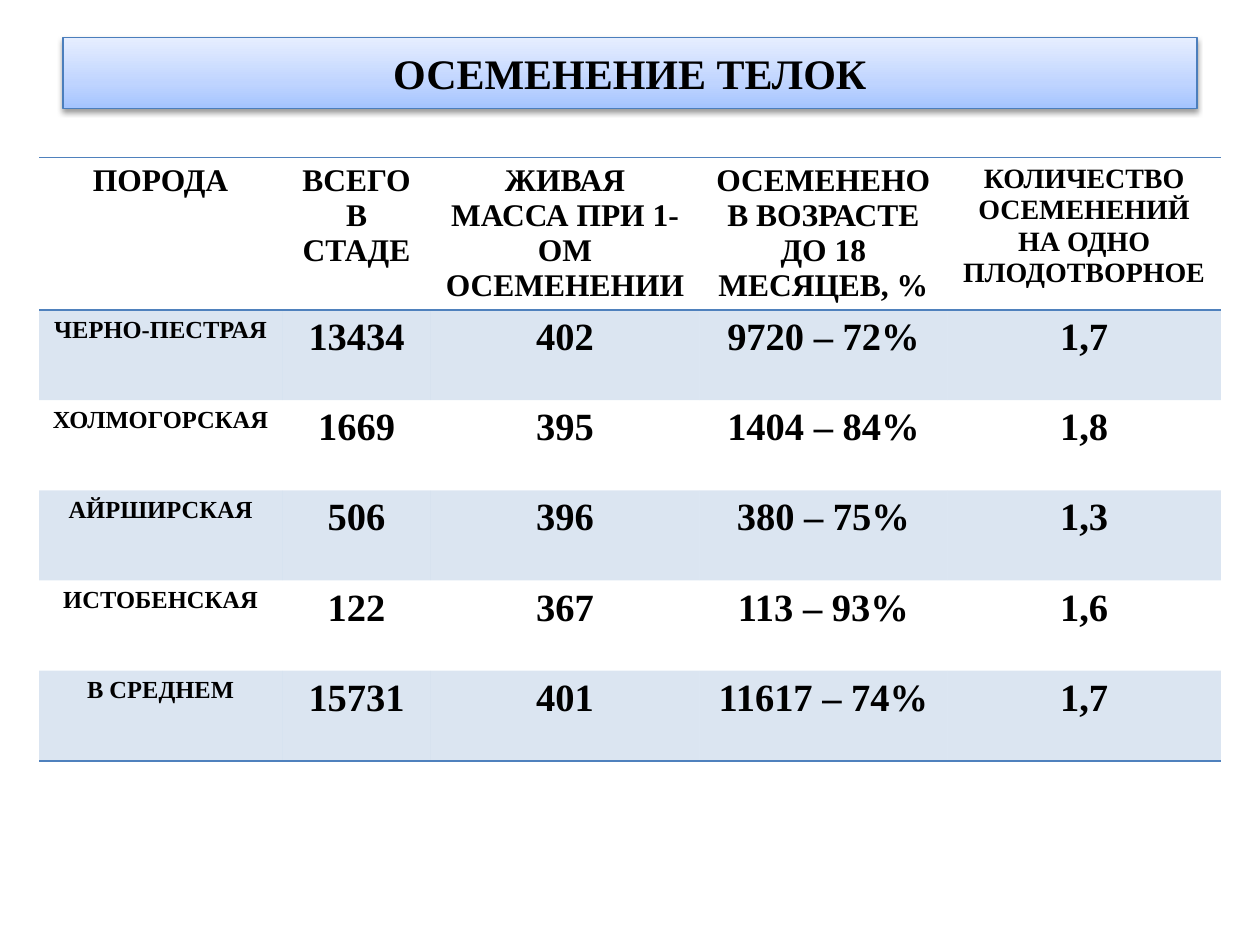
"""Build a slide with a title banner and a table of heifer insemination by breed."""
import pptx
import pptx.dml.color
import pptx.enum.shapes
import pptx.enum.text
import pptx.oxml
import pptx.oxml.ns
import pptx.util

Inches = pptx.util.Inches
Pt = pptx.util.Pt

COLORS = {
    "text": "000000",
    "accent": "4F81BD",
    "banner_line": "4B7EBC",
    "banner_bottom": "A4C4FF",
    "banner_middle": "BFD4FF",
    "banner_top": "E6EEFF",
    "shadow": "000000",
}
FONT = "Times New Roman"
PLAIN_TABLE_STYLE = "{2D5ABB26-0587-4C30-8999-92F81FD0307C}"
COLUMN_WIDTHS = [1.93, 1.18, 2.13, 1.97, 2.17]
HEADER_HEIGHT = 1.21
ROW_HEIGHT = 0.716
HEADER_SIZES = [18, 18, 18, 18, 16]
BODY_SIZES = [14, 22, 22, 22, 22]
ROWS = [
    ["ПОРОДА", "ВСЕГО В СТАДЕ", "ЖИВАЯ МАССА ПРИ 1-ОМ ОСЕМЕНЕНИИ",
     "ОСЕМЕНЕНО В ВОЗРАСТЕ ДО 18 МЕСЯЦЕВ, %",
     "КОЛИЧЕСТВО ОСЕМЕНЕНИЙ НА ОДНО ПЛОДОТВОРНОЕ"],
    ["ЧЕРНО-ПЕСТРАЯ", "13434", "402", "9720 – 72%", "1,7"],
    ["ХОЛМОГОРСКАЯ", "1669", "395", "1404 – 84%", "1,8"],
    ["АЙРШИРСКАЯ", "506", "396", "380 – 75%", "1,3"],
    ["ИСТОБЕНСКАЯ", "122", "367", "113 – 93%", "1,6"],
    ["В СРЕДНЕМ", "15731", "401", "11617 – 74%", "1,7"],
]


def rgb(name):
    return pptx.dml.color.RGBColor.from_string(COLORS[name])


def drawing_xml(markup):
    namespace = pptx.oxml.ns.nsdecls("a")
    return pptx.oxml.parse_xml(markup.replace(">", f" {namespace}>", 1))


def color_xml(name, alpha=100):
    return (f'<a:srgbClr val="{COLORS[name]}">'
            f'<a:alpha val="{alpha * 1000}"/></a:srgbClr>')


def write_text(frame, text, size=18, bold=True, color="text"):
    paragraph = frame.paragraphs[0]
    paragraph.alignment = pptx.enum.text.PP_ALIGN.CENTER
    span = paragraph.add_run()
    span.text = text
    span.font.name = FONT
    span.font.size = Pt(size)
    span.font.bold = bold
    span.font.color.rgb = rgb(color)


def add_banner(page, text):
    box = page.shapes.add_shape(
        pptx.enum.shapes.MSO_SHAPE.RECTANGLE,
        Inches(0.5), Inches(0.3), Inches(9), Inches(0.56))
    box.shadow.inherit = False
    box.line.color.rgb = rgb("banner_line")
    box.line.width = Pt(0.75)
    properties = box._element.spPr
    stops = [(0, "banner_bottom"), (35, "banner_middle"), (100, "banner_top")]
    stop_xml = "".join(f'<a:gs pos="{position * 1000}">{color_xml(name)}</a:gs>'
                       for position, name in stops)
    geometry = properties.find(pptx.oxml.ns.qn("a:prstGeom"))
    geometry.addnext(drawing_xml(
        f'<a:gradFill rotWithShape="1"><a:gsLst>{stop_xml}</a:gsLst>'
        '<a:lin ang="16200000" scaled="0"/></a:gradFill>'))
    effects = properties.find(pptx.oxml.ns.qn("a:effectLst"))
    effects.append(drawing_xml(
        f'<a:outerShdw blurRad="{Pt(3.1)}" dist="{Pt(1.6)}" dir="5400000" '
        f'rotWithShape="0">{color_xml("shadow", 38)}</a:outerShdw>'))
    box.text_frame.vertical_anchor = pptx.enum.text.MSO_ANCHOR.MIDDLE
    write_text(box.text_frame, text, size=24)


def format_cell(cell, edges, shaded):
    properties = cell._tc.get_or_add_tcPr()
    for edge in edges:
        properties.append(drawing_xml(
            f'<a:ln{edge} w="{Pt(1)}"><a:solidFill>{color_xml("accent")}'
            f'</a:solidFill></a:ln{edge}>'))
    if shaded:
        properties.append(drawing_xml(
            f'<a:solidFill>{color_xml("accent", 20)}</a:solidFill>'))
    else:
        cell.fill.background()


def add_breed_table(page):
    heights = [HEADER_HEIGHT] + [ROW_HEIGHT] * (len(ROWS) - 1)
    table = page.shapes.add_table(
        len(ROWS), len(COLUMN_WIDTHS), Inches(0.31), Inches(1.25),
        Inches(sum(COLUMN_WIDTHS)), Inches(sum(heights))).table
    table.first_row = table.horz_banding = False
    style = table._tbl.tblPr.find(pptx.oxml.ns.qn("a:tableStyleId"))
    style.text = PLAIN_TABLE_STYLE
    for column, width in zip(table.columns, COLUMN_WIDTHS):
        column.width = Inches(width)
    edges_by_row = {0: "TB", len(ROWS) - 1: "B"}
    for index, values in enumerate(ROWS):
        table.rows[index].height = Inches(heights[index])
        sizes = BODY_SIZES if index else HEADER_SIZES
        for cell, value, size in zip(table.rows[index].cells, values, sizes):
            write_text(cell.text_frame, value, size=size)
            format_cell(cell, edges_by_row.get(index, ""), index % 2 == 1)


def main():
    deck = pptx.Presentation()
    deck.slide_width = Inches(10)
    deck.slide_height = Inches(7.5)
    page = deck.slides.add_slide(deck.slide_layouts[6])
    add_banner(page, "ОСЕМЕНЕНИЕ ТЕЛОК")
    add_breed_table(page)
    deck.save("out.pptx")


if __name__ == "__main__":
    main()
